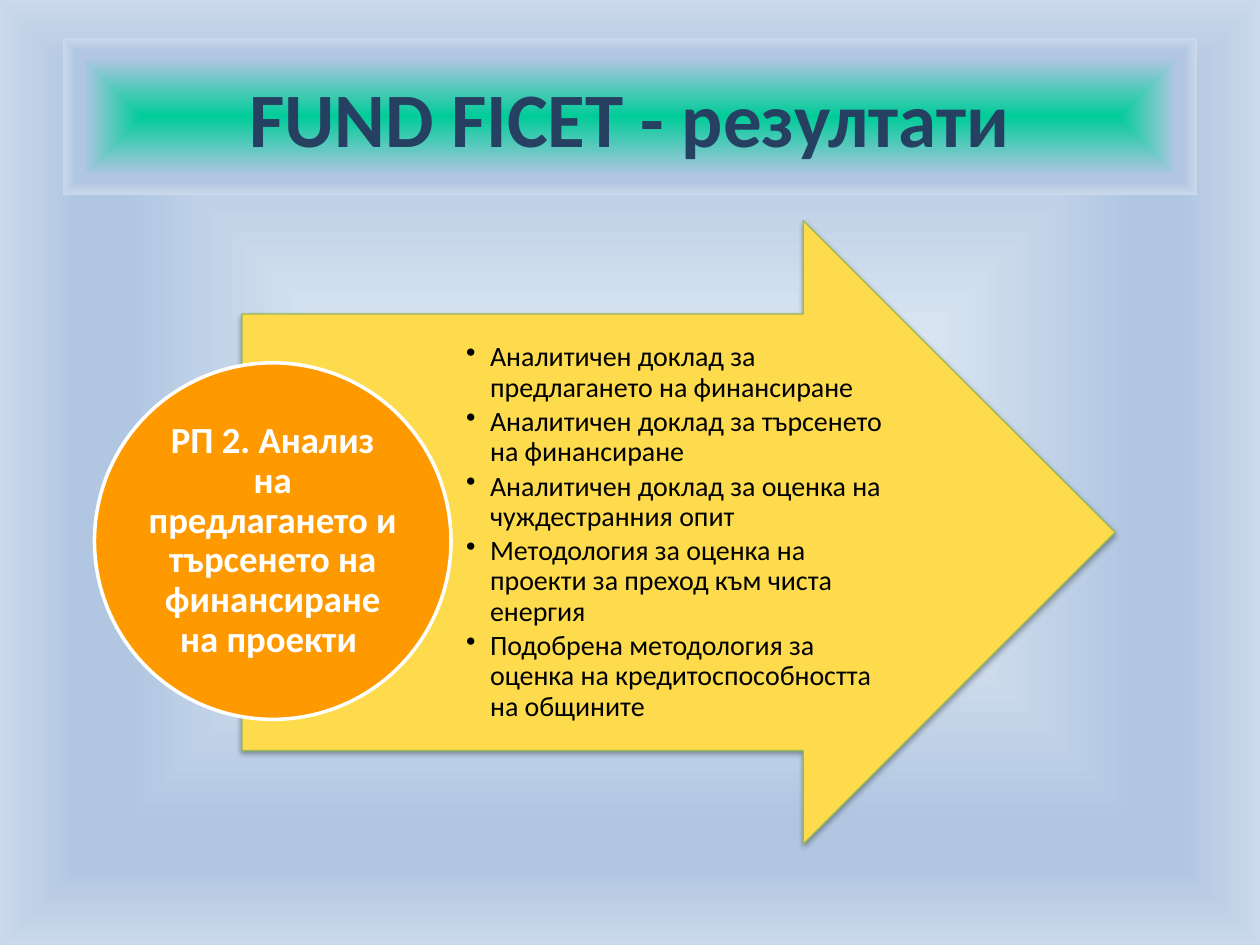
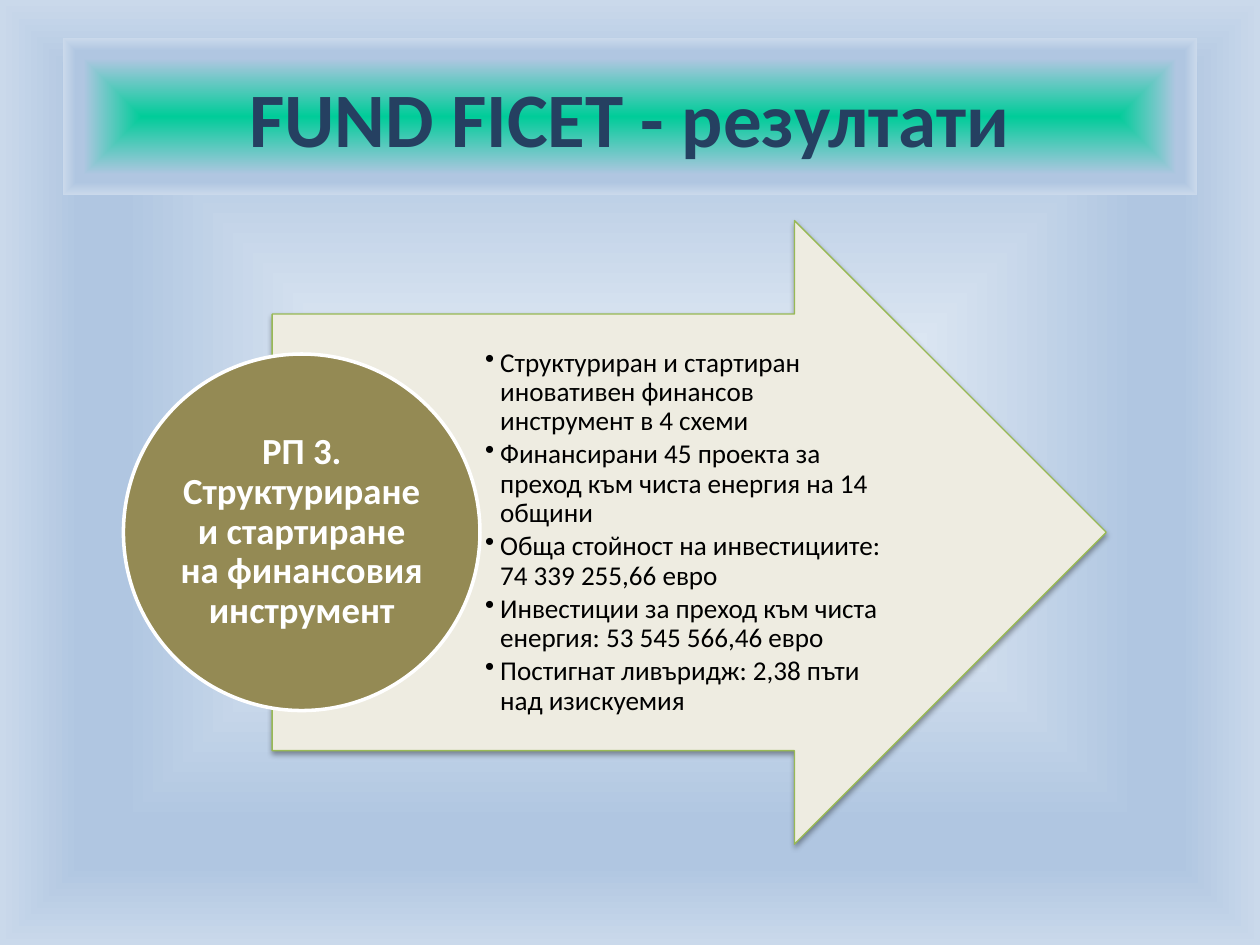
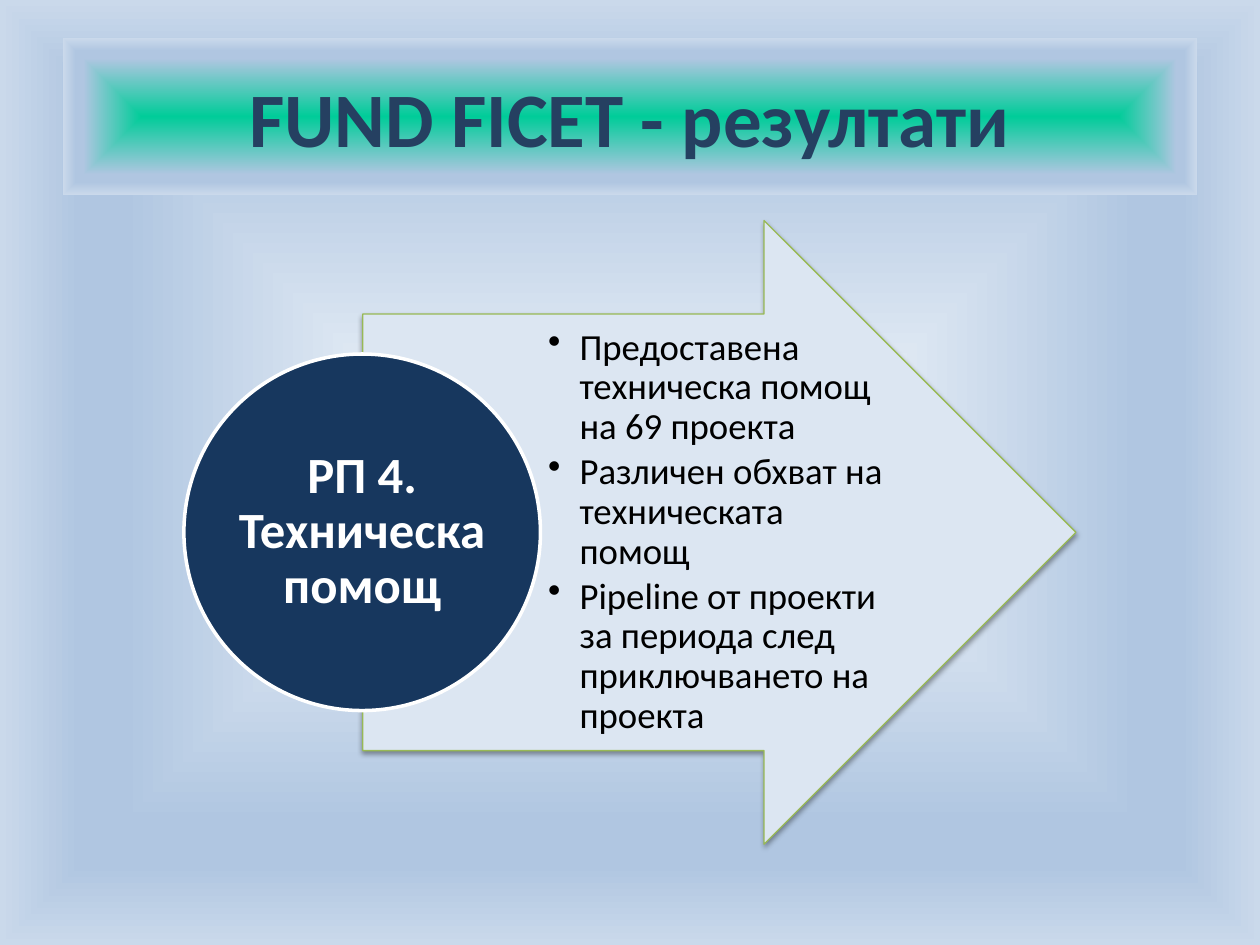
from dataclasses import dataclass
from typing import Any

from lxml import etree
from pptx import Presentation
from pptx import util as u
from pptx.dml.color import RGBColor
from pptx.enum import shapes, text
from pptx.oxml import ns

HUES = {
    "glow": "F6F9FC", "mint": "00CC99", "mist": "B0C6E1", "pale": "CAD9EB",
    "navy": "254061", "edge": "98B955", "white": "FFFFFF", "black": "000000",
    "gold": "FDDB4D", "amber": "FF9900", "sand": "EEECE1", "olive": "948A54",
    "ice": "DCE6F2", "ink": "17375E",
}
FACE = "Calibri"
TITLE = "FUND FICET - резултати"
TOP, HIGH = 1.75, 4.95  # arrow
SHAFT = 0.7  # share of the arrow's height
DISC, INSET = 2.83, 0.415  # circle and its label


@dataclass
class Stage:
    """One work package: a circle with its name and an arrow of results."""
    name: str
    size: float
    disc: str
    spot: tuple[float, float]
    pad: float
    arrow: str
    left: float
    wide: float
    items: list[str]
    text_left: float
    text_wide: float
    text_size: float
    indent: float
    pads: tuple[float, float]


STAGES = [
    Stage("РП 2. Анализ на предлагането и търсенето на финансиране на проекти ",
          21, "amber", (0.75, 2.88), 0.01, "gold", 1.92, 6.93,
          ["Аналитичен доклад за предлагането на финансиране",
           "Аналитичен доклад за търсенето на финансиране",
           "Аналитичен доклад за оценка на чуждестранния опит",
           "Методология за оценка на проекти за преход към чиста енергия",
           "Подобрена методология за оценка на кредитоспособността на общините"],
          3.66, 3.47, 16, 0.19, (0.04, 0.02)),
    Stage("РП 3. Структуриране и стартиране на финансовия инструмент",
          21, "olive", (0.98, 2.81), 0.01, "sand", 2.16, 6.62,
          ["Структуриран и стартиран иновативен финансов инструмент в 4 схеми",
           "Финансирани 45 проекта за преход към чиста енергия на 14 общини",
           "Обща стойност на инвестициите: 74 339 255,66 евро",
           "Инвестиции за преход към чиста енергия: 53 545 566,46 евро",
           "Постигнат ливъридж: 2,38 пъти над изискуемия"],
          3.81, 3.23, 15.5, 0.12, (0.04, 0.02)),
    Stage("РП 4. Техническа помощ",
          29, "ink", (1.46, 2.81), 0.02, "ice", 2.88, 5.66,
          ["Предоставена техническа помощ на 69 проекта",
           "Различен обхват на техническата помощ",
           "Pipeline от проекти за периода след приключването на проекта"],
          4.29, 2.76, 21, 0.25, (0.06, 0.03)),
]


def tint(key: str) -> RGBColor:
    return RGBColor.from_string(HUES[key])


def box(*sides: float) -> list[u.Length]:
    return [u.Inches(side) for side in sides]


def apply(target: Any, values: dict[str, Any]) -> None:
    for key, value in values.items():
        setattr(target, key, value)


def node(root: Any, tag: str, **attrs: Any) -> Any:
    return etree.SubElement(root, ns.qn(tag), {k: str(v) for k, v in attrs.items()})


def blend(fill: Any, root: Any, core: str) -> None:
    """Fill from a core colour in the middle out to pale edges."""
    fill.gradient()
    grad = root.xpath(".//a:gradFill")[0]
    for child in list(grad):
        grad.remove(child)
    stops = node(grad, "a:gsLst")
    for pos, key in [(0, core), (74, "mist"), (83, "mist"), (100, "pale")]:
        stop = node(stops, "a:gs", pos=pos * 1000)
        node(stop, "a:srgbClr", val=HUES[key])
    shade = node(grad, "a:path", path="shape")
    node(shade, "a:fillToRect", l=50000, t=50000, r=50000, b=50000)


def paint(shape: Any, fill: str, line: str, width: float) -> None:
    shape.shadow.inherit = False
    shape.fill.solid()
    shape.fill.fore_color.rgb = tint(fill)
    shape.line.color.rgb = tint(line)
    shape.line.width = u.Pt(width)


def cast(shape: Any) -> None:
    """Drop a soft shadow straight down."""
    effects = shape.element.xpath("./p:spPr/a:effectLst")[0]
    drop = node(effects, "a:outerShdw", blurRad=u.Pt(3.1), dist=u.Pt(1.6),
                dir=5400000, rotWithShape=0)
    hue = node(drop, "a:srgbClr", val=HUES["black"])
    node(hue, "a:alpha", val=38000)


def space(para: Any, share: int) -> None:
    """Set line spacing and a gap after, in percent of the line."""
    apply(para, {"line_spacing": 0.9, "space_after": u.Pt(0)})
    gap = para._p.pPr.find(ns.qn("a:spcAft"))
    gap.remove(gap[0])
    node(gap, "a:spcPct", val=share * 1000)


def bullet(para: Any, indent: float) -> None:
    para.level = 1
    props = para._p.get_or_add_pPr()
    props.set("marL", str(u.Inches(indent)))
    props.set("indent", str(-u.Inches(indent)))
    node(props, "a:buChar", char="•")


def write(para: Any, words: str, size: float, hue: str, bold: bool) -> None:
    run = para.add_run()
    run.text = words
    apply(run.font, {"name": FACE, "size": u.Pt(size), "bold": bold})
    run.font.color.rgb = tint(hue)


def frame(shape: Any, pads: tuple[float, float, float, float]) -> Any:
    body = shape.text_frame
    sides = ["margin_left", "margin_top", "margin_right", "margin_bottom"]
    apply(body, {"word_wrap": True, "vertical_anchor": text.MSO_ANCHOR.MIDDLE})
    apply(body, dict(zip(sides, box(*pads))))
    return body


def draw_stage(slide: Any, stage: Stage) -> None:
    group = slide.shapes.add_group_shape().shapes

    # Arrow
    arrow = group.add_shape(shapes.MSO_SHAPE.RIGHT_ARROW,
                            *box(stage.left, TOP, stage.wide, HIGH))
    arrow.adjustments[0], arrow.adjustments[1] = SHAFT, 0.5
    paint(arrow, stage.arrow, "edge", 0.75)
    cast(arrow)

    # Results, as high as the arrow's shaft
    area = group.add_textbox(*box(stage.text_left, TOP + HIGH * (1 - SHAFT) / 2,
                                  stage.text_wide, HIGH * SHAFT))
    near, far = stage.pads
    body = frame(area, (near, 0.01, far, 0.01))
    for i, item in enumerate(stage.items):
        para = body.add_paragraph() if i else body.paragraphs[0]
        space(para, 15)
        bullet(para, stage.indent)
        write(para, item, stage.text_size, "black", False)

    # Circle and its label
    x, y = stage.spot
    disc = group.add_shape(shapes.MSO_SHAPE.OVAL, *box(x, y, DISC, DISC))
    paint(disc, stage.disc, "white", 2)
    side = DISC - 2 * INSET
    label = group.add_textbox(*box(x + INSET, y + INSET, side, side))
    para = frame(label, (stage.pad,) * 4).paragraphs[0]
    para.alignment = text.PP_ALIGN.CENTER
    space(para, 35)
    write(para, stage.name, stage.size, "white", True)


def draw_title(slide: Any) -> None:
    band = slide.shapes.add_shape(shapes.MSO_SHAPE.RECTANGLE, *box(0.5, 0.3, 9, 1.25))
    band.shadow.inherit = False
    band.line.fill.background()
    blend(band.fill, band.element, "mint")
    para = frame(band, (0.1, 0.05, 0.1, 0.05)).paragraphs[0]
    para.alignment = text.PP_ALIGN.CENTER
    write(para, TITLE, 44, "navy", True)


def main() -> None:
    deck = Presentation()
    apply(deck, {"slide_width": u.Inches(10), "slide_height": u.Inches(7.5)})
    master = deck.slide_master
    blend(master.background.fill, master.element, "glow")
    for stage in STAGES:
        slide = deck.slides.add_slide(deck.slide_layouts[6])
        draw_stage(slide, stage)
        draw_title(slide)
    deck.save("out.pptx")


if __name__ == "__main__":
    main()
